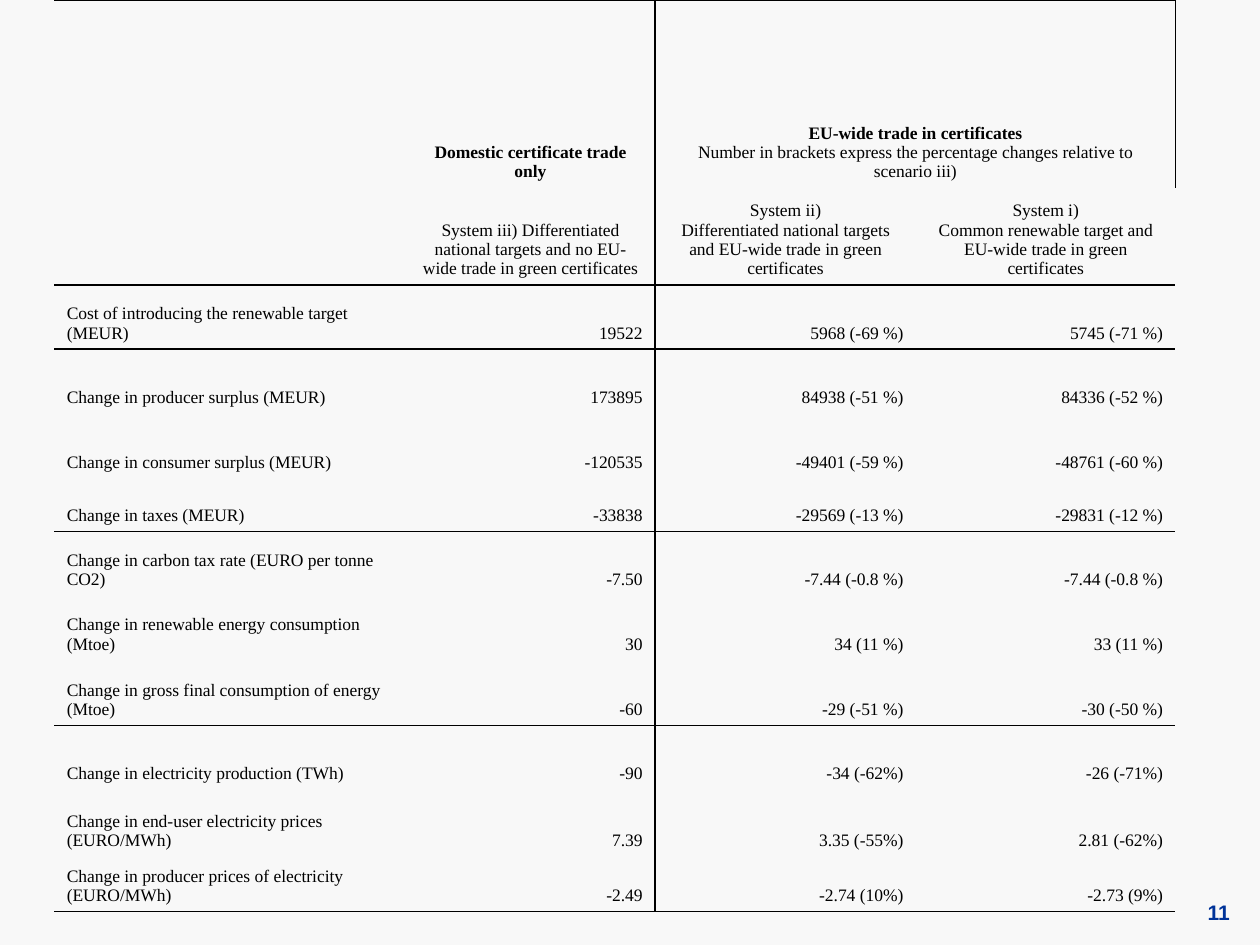
"""Build a slide with a table comparing green certificate trading systems."""
from pptx import Presentation
from pptx.dml.color import RGBColor
from pptx.enum.text import MSO_ANCHOR, PP_ALIGN
from pptx.oxml.ns import qn
from pptx.util import Inches, Pt
from lxml.etree import SubElement

BACKGROUND = RGBColor(0xF8, 0xF8, 0xF8)
BLACK = RGBColor(0, 0, 0)
NAVY = RGBColor(0x00, 0x33, 0x99)

HEADINGS = [
    (0, 1, ["Domestic certificate trade only"]),
    (0, 2, ["EU-wide trade in certificates",
            "Number in brackets express the percentage changes relative to scenario iii)"]),
    (2, 1, ["System iii) Differentiated national targets and no EU-wide trade in green certificates"]),
    (2, 2, ["System ii)", "Differentiated national targets and EU-wide trade in green certificates"]),
    (2, 3, ["System i)", "Common renewable target and EU-wide trade in green certificates"]),
]
RESULTS = [
    ("Cost of introducing the renewable target (MEUR)", "19522", "5968 (-69 %)", "5745 (-71 %)"),
    ("Change in producer surplus (MEUR)", "173895", "84938 (-51 %)", "84336 (-52 %)"),
    ("Change in consumer surplus (MEUR)", "-120535", "-49401 (-59 %)", "-48761 (-60 %)"),
    ("Change in taxes (MEUR)", "-33838", "-29569 (-13 %)", "-29831 (-12 %)"),
    ("Change in carbon tax rate (EURO per tonne CO2)", "-7.50", "-7.44 (-0.8 %)", "-7.44 (-0.8 %)"),
    ("Change in renewable energy consumption (Mtoe)", "30", "34 (11 %)", "33 (11 %)"),
    ("Change in gross final consumption of energy (Mtoe)", "-60", "-29 (-51 %)", "-30 (-50 %)"),
    ("Change in electricity production (TWh)", "-90", "-34 (-62%)", "-26 (-71%)"),
    ("Change in end-user electricity prices (EURO/MWh)", "7.39", "3.35 (-55%)", "2.81 (-62%)"),
    ("Change in producer prices of electricity (EURO/MWh)", "-2.49", "-2.74 (10%)", "-2.73 (9%)"),
]
COL_WIDTHS = [2.79, 1.98, 2.07, 2.06]
ROW_HEIGHTS = [0.89, 0.18, 0.77, 0.51, 0.51, 0.52, 0.42, 0.51, 0.51, 0.52, 0.51, 0.53, 0.2]
HEADER_ROWS = 3
RULES_BELOW = {-1, 2, 3, 6, 9, 12}


def set_font(p, size, name, color, bold=False):
    p.font.size, p.font.name, p.font.bold = Pt(size), name, bold
    p.font.color.rgb = color


def set_borders(cell, **sides):
    tc_pr = cell._tc.get_or_add_tcPr()
    for side, visible in sides.items():
        ln = SubElement(tc_pr, qn(f"a:ln{side}"), w=str(Pt(1)))
        if visible:
            fill = SubElement(ln, qn("a:solidFill"))
            SubElement(fill, qn("a:srgbClr"), val=str(BLACK))
        else:
            SubElement(ln, qn("a:noFill"))


def write_cell(cell, lines, align, bold_first=False):
    cell.vertical_anchor = MSO_ANCHOR.BOTTOM
    tf = cell.text_frame
    tf.text = "\n".join(lines)
    for i, p in enumerate(tf.paragraphs):
        p.alignment = align
        set_font(p, 10, "Times New Roman", BLACK, bold_first and i == 0)


def add_results_table(s):
    frame = s.shapes.add_table(len(ROW_HEIGHTS), len(COL_WIDTHS), Inches(0.43), 0,
                               Inches(sum(COL_WIDTHS)), Inches(sum(ROW_HEIGHTS)))
    table = frame.table
    table.first_row = table.horz_banding = False
    for column, width in zip(table.columns, COL_WIDTHS):
        column.width = Inches(width)
    for r, (row, height) in enumerate(zip(table.rows, ROW_HEIGHTS)):
        row.height = Inches(height)
        for c, cell in enumerate(row.cells):
            set_borders(cell, L=c == 2, R=c == 1 or (c > 1 and r < 2),
                        T=r - 1 in RULES_BELOW, B=r in RULES_BELOW)
            cell.fill.background()
            write_cell(cell, [""], PP_ALIGN.LEFT)
    table.cell(0, 1).merge(table.cell(1, 1))
    table.cell(0, 2).merge(table.cell(1, 3))
    for r, c, lines in HEADINGS:
        write_cell(table.cell(r, c), lines, PP_ALIGN.CENTER, bold_first=r == 0)
    for r, values in enumerate(RESULTS, HEADER_ROWS):
        for c, value in enumerate(values):
            write_cell(table.cell(r, c), [value], PP_ALIGN.RIGHT if c else PP_ALIGN.LEFT)


def add_page_number(s):
    box = s.shapes.add_textbox(Inches(9.25), Inches(7.11), Inches(0.51), Inches(0.26))
    tf = box.text_frame
    tf.word_wrap = True
    tf.vertical_anchor = MSO_ANCHOR.MIDDLE
    tf.margin_left = tf.margin_right = tf.margin_top = tf.margin_bottom = 0
    p = tf.paragraphs[0]
    p.text = "11"
    p.alignment = PP_ALIGN.RIGHT
    set_font(p, 12, "Arial", NAVY, True)


def main():
    prs = Presentation()
    prs.slide_width, prs.slide_height = Inches(10), Inches(7.5)
    s = prs.slides.add_slide(prs.slide_layouts[6])
    s.background.fill.solid()
    s.background.fill.fore_color.rgb = BACKGROUND
    add_page_number(s)
    add_results_table(s)
    prs.save("out.pptx")


if __name__ == "__main__":
    main()
